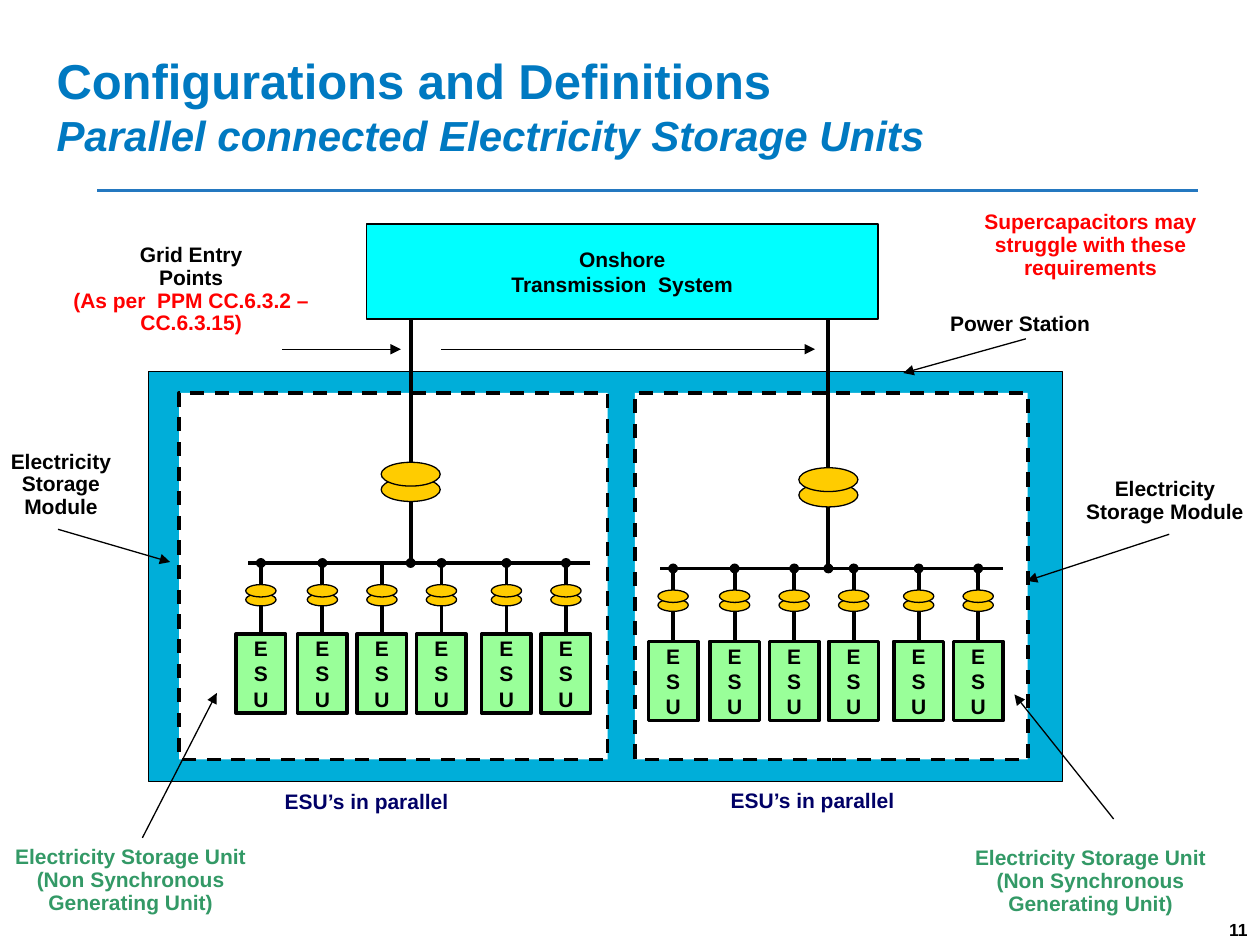
import dataclasses

import lxml.etree
import pptx
import pptx.dml.color
import pptx.enum.dml
import pptx.enum.shapes
import pptx.enum.text
import pptx.oxml.ns
import pptx.util

Cm = pptx.util.Cm
Pt = pptx.util.Pt
ALIGN = pptx.enum.text.PP_ALIGN
SHAPE = pptx.enum.shapes.MSO_SHAPE


@dataclasses.dataclass(frozen=True)
class Theme:
    font: str = "Arial"
    black: str = "000000"
    white: str = "FFFFFF"
    title: str = "0079C1"
    rule: str = "2478C0"
    station: str = "00AED9"
    grid: str = "00FFFF"
    transformer: str = "FFCC00"
    storage: str = "99FF99"
    warning: str = "FF0000"
    caption: str = "000066"
    unit: str = "339966"
    title_size: float = 28
    subtitle_size: float = 24
    body_size: float = 12
    number_size: float = 10


class Diagram:
    def __init__(self, slide, theme):
        self.slide = slide
        self.theme = theme

    def color(self, value):
        return pptx.dml.color.RGBColor.from_string(value)

    def format(self, paragraph, color, size=None, bold=True, italic=False):
        for run in paragraph.runs:
            run.font.name = self.theme.font
            run.font.size = Pt(size or self.theme.body_size)
            run.font.bold = bold
            run.font.italic = italic
            run.font.color.rgb = self.color(color)

    def label(self, left, top, width, height, text, color=None, align=ALIGN.CENTER,
              spacing=0.9, inset=False, wrap=True):
        shape = self.slide.shapes.add_textbox(Cm(left), Cm(top), Cm(width), Cm(height))
        text_frame = shape.text_frame
        text_frame.word_wrap = wrap
        if not inset:
            text_frame.margin_left = text_frame.margin_right = 0
            text_frame.margin_top = text_frame.margin_bottom = 0
        text_frame.text = text
        for paragraph in text_frame.paragraphs:
            paragraph.alignment = align
            paragraph.line_spacing = spacing
            self.format(paragraph, color or self.theme.black)
        return text_frame.paragraphs

    def shape(self, kind, left, top, width, height, fill, line_width=None, text="", dashed=False):
        shape = self.slide.shapes.add_shape(kind, Cm(left), Cm(top), Cm(width), Cm(height))
        shape.shadow.inherit = False
        shape.fill.solid()
        shape.fill.fore_color.rgb = self.color(fill)
        if line_width is None:
            shape.line.fill.background()
        else:
            shape.line.color.rgb = self.color(self.theme.black)
            shape.line.width = Pt(line_width)
        if dashed:
            shape.line.dash_style = pptx.enum.dml.MSO_LINE.DASH
        if text:
            shape.text_frame.word_wrap = True
            shape.text_frame.vertical_anchor = pptx.enum.text.MSO_ANCHOR.MIDDLE
            shape.text_frame.text = text
            for paragraph in shape.text_frame.paragraphs:
                paragraph.alignment = ALIGN.CENTER
                self.format(paragraph, self.theme.black)
        return shape

    def rectangle(self, left, top, width, height, fill, line_width, text="", dashed=False):
        return self.shape(SHAPE.RECTANGLE, left, top, width, height, fill, line_width, text, dashed)

    def ellipse(self, center_x, center_y, width, height, fill, line_width=None):
        return self.shape(SHAPE.OVAL, center_x - width / 2, center_y - height / 2,
                          width, height, fill, line_width)

    def line(self, start_x, start_y, end_x, end_y, width=2.25, color=None, arrow=False):
        connector = self.slide.shapes.add_connector(
            pptx.enum.shapes.MSO_CONNECTOR.STRAIGHT,
            Cm(start_x), Cm(start_y), Cm(end_x), Cm(end_y))
        connector.line.color.rgb = self.color(color or self.theme.black)
        connector.line.width = Pt(width)
        properties = connector._element.spPr
        if arrow:
            outline = properties.find(pptx.oxml.ns.qn("a:ln"))
            lxml.etree.SubElement(outline, pptx.oxml.ns.qn("a:tailEnd"), type="triangle")
        lxml.etree.SubElement(properties, pptx.oxml.ns.qn("a:effectLst"))
        return connector

    def arrow(self, start_x, start_y, end_x, end_y):
        return self.line(start_x, start_y, end_x, end_y, 0.75, arrow=True)

    def transformer(self, x, lower_y, upper_y, width, height):
        for y in (lower_y, upper_y):
            self.ellipse(x, y, width, height, self.theme.transformer, 0.75)

    def node(self, x, y):
        self.ellipse(x, y, 0.2, 0.2, self.theme.black)

    def storage_module(self, left, width, bus_left, bus_y, supply_x, unit_top, unnoded=()):
        self.rectangle(left, 7.92, width, 7.39, self.theme.white, 2, dashed=True)
        self.line(bus_left + 6.9, bus_y, bus_left, bus_y)
        for index, offset in enumerate((0, 1.24, 2.44, 3.64, 4.95, 6.15)):
            x = bus_left + 0.26 + offset
            unit = self.rectangle(x - 0.5, unit_top, 1, 1.6, self.theme.storage, 2, "ESU")
            self.line(x, bus_y, x, unit_top).end_connect(unit, 0)
            self.transformer(x, bus_y + 0.74, bus_y + 0.56, 0.61, 0.25)
            if index not in unnoded:
                self.node(x, bus_y)
        self.line(supply_x, bus_y, supply_x, bus_y - 1.72)
        self.line(supply_x, bus_y - 1.9, supply_x, 6.32)
        self.node(supply_x, bus_y)
        self.transformer(supply_x, bus_y - 1.48, bus_y - 1.79, 1.19, 0.48)


def main():
    presentation = pptx.Presentation()
    presentation.slide_width = Cm(25.4)
    presentation.slide_height = Cm(19.05)
    theme = Theme()
    diagram = Diagram(presentation.slides.add_slide(presentation.slide_layouts[6]), theme)

    diagram.line(1.96, 3.84, 24.16, 3.84, 1.5, theme.rule)
    number = diagram.label(24.03, 18.52, 1.37, 0.13, "11", align=ALIGN.RIGHT, spacing=1, inset=True)
    diagram.format(number[0], theme.black, theme.number_size)
    heading, subheading = diagram.label(
        0.89, 0.89, 18.19, 2.49,
        "Configurations and Definitions\nParallel connected Electricity Storage Units",
        align=ALIGN.LEFT, spacing=1, inset=True, wrap=False)
    diagram.format(heading, theme.title, theme.title_size)
    diagram.format(subheading, theme.title, theme.subtitle_size, italic=True)

    diagram.rectangle(3, 7.49, 18.42, 8.26, theme.station, 0.75)
    diagram.storage_module(3.61, 8.64, 5, 11.35, 8.28, 12.78, unnoded=(2,))
    diagram.storage_module(12.8, 7.92, 13.31, 11.46, 16.7, 12.93)
    diagram.rectangle(7.39, 4.52, 10.31, 1.91, theme.grid, 1, "Onshore\nTransmission  System")

    entry = diagram.label(1.3, 4.93, 5.11, 1.93,
                          "Grid Entry\nPoints\n(As per  PPM CC.6.3.2 – CC.6.3.15)")
    diagram.format(entry[2], theme.warning)
    diagram.label(18.01, 6.32, 5.11, 0.53, "Power Station")
    module_text = "Electricity\nStorage Module"
    diagram.label(0, 9.09, 2.46, 0.99, module_text)
    diagram.label(20.93, 9.65, 5.11, 0.94, module_text)
    for left, top in ((5.74, 15.95), (14.73, 15.93)):
        diagram.label(left, top, 5.31, 0.5, "ESU’s in parallel", theme.caption, ALIGN.LEFT)
    for left, top in ((0.08, 17.07), (19.43, 17.09)):
        diagram.label(left, top, 5.11, 1.52,
                      "Electricity Storage Unit\n(Non Synchronous Generating Unit)", theme.unit)
    diagram.label(19.43, 4.14, 5.11, 1.6,
                  "Supercapacitors may struggle with these requirements", theme.warning, inset=True)

    for ends in (
        (5.69, 7.04, 8.08, 7.04),
        (8.89, 7.04, 16.43, 7.04),
        (20.68, 6.83, 18.21, 7.52),
        (1.17, 10.67, 3.43, 11.33),
        (23.57, 10.77, 20.7, 11.71),
        (2.87, 16.89, 4.37, 13.97),
        (22.45, 16.51, 20.45, 14),
    ):
        diagram.arrow(*ends)

    presentation.save("out.pptx")


if __name__ == "__main__":
    main()
